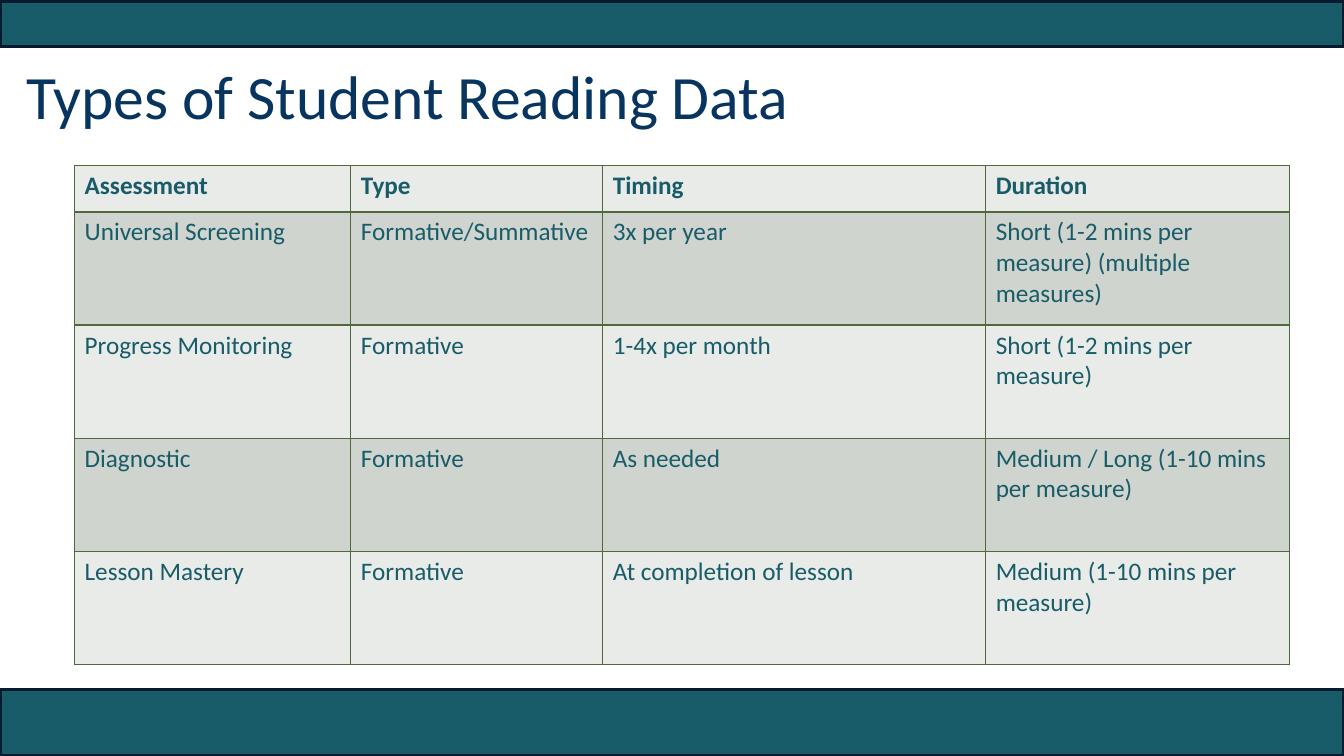
from dataclasses import dataclass

from lxml import etree
from pptx import Presentation
from pptx.dml.color import RGBColor
from pptx.enum import shapes, text
from pptx.oxml import ns
from pptx.util import Cm, Pt

TITLE = "Types of Student Reading Data"
ASSESSMENTS = [
    ("Assessment", "Type", "Timing", "Duration"),
    ("Universal Screening", "Formative/Summative", "3x per year",
     "Short (1-2 mins per measure) (multiple measures)"),
    ("Progress Monitoring", "Formative", "1-4x per month",
     "Short (1-2 mins per measure)"),
    ("Diagnostic", "Formative", "As needed",
     "Medium / Long (1-10 mins per measure)"),
    ("Lesson Mastery", "Formative", "At completion of lesson",
     "Medium (1-10 mins per measure)"),
]
SLIDE_WIDTH, SLIDE_HEIGHT = 33.87, 19.05
BANDS = [(0.03, 1.14), (17.37, 1.68)]  # top, height
COLUMN_WIDTHS = [6.96, 6.35, 9.65, 7.65]
HEADER_HEIGHT, ROW_HEIGHT = 1.17, 2.85


@dataclass(frozen=True)
class Theme:
    font: str = "Calibri"
    title_size: int = 44
    table_size: int = 18
    title: str = "08355F"
    teal: str = "185C69"
    band_line: str = "041B30"
    grid: str = "4F693D"
    row_fills: tuple = ("E9EBE8", "D0D4CE")


THEME = Theme()


def rgb(value):
    return RGBColor.from_string(value)


def write(frame, words, size, color, bold=False):
    run = frame.paragraphs[0].add_run()
    run.text = words
    run.font.name = THEME.font
    run.font.size = Pt(size)
    run.font.bold = bold
    run.font.color.rgb = rgb(color)


def add_band(slide, top, height):
    band = slide.shapes.add_shape(shapes.MSO_SHAPE.RECTANGLE, 0, Cm(top),
                                  Cm(SLIDE_WIDTH), Cm(height))
    band.shadow.inherit = False
    band.fill.solid()
    band.fill.fore_color.rgb = rgb(THEME.teal)
    band.line.color.rgb = rgb(THEME.band_line)
    band.line.width = Pt(2.5)


def add_title(slide):
    title = slide.shapes.add_textbox(Cm(0.41), Cm(1.55), Cm(29.21), Cm(2.2))
    frame = title.text_frame
    frame.word_wrap = True
    frame.vertical_anchor = text.MSO_ANCHOR.TOP
    frame.paragraphs[0].line_spacing = 0.9
    write(frame, TITLE, THEME.title_size, THEME.title)


def outline(cell):
    """Draw all four borders; they must come before the cell's fill in the XML."""
    properties = cell._tc.get_or_add_tcPr()
    for position, side in enumerate(("lnL", "lnR", "lnT", "lnB")):
        border = etree.Element(ns.qn(f"a:{side}"), w=str(Pt(1)))
        fill = etree.SubElement(border, ns.qn("a:solidFill"))
        etree.SubElement(fill, ns.qn("a:srgbClr"), val=THEME.grid)
        properties.insert(position, border)


def add_assessment_table(slide):
    heights = [HEADER_HEIGHT] + [ROW_HEIGHT] * (len(ASSESSMENTS) - 1)
    table = slide.shapes.add_table(
        len(heights), len(COLUMN_WIDTHS), Cm(1.88), Cm(4.17),
        Cm(sum(COLUMN_WIDTHS)), Cm(sum(heights))).table
    for column, width in zip(table.columns, COLUMN_WIDTHS):
        column.width = Cm(width)
    for r, (assessment, height) in enumerate(zip(ASSESSMENTS, heights)):
        table.rows[r].height = Cm(height)
        for c, words in enumerate(assessment):
            cell = table.cell(r, c)
            cell.fill.solid()
            cell.fill.fore_color.rgb = rgb(THEME.row_fills[r % 2])
            outline(cell)
            write(cell.text_frame, words, THEME.table_size, THEME.teal, bold=r == 0)


def main():
    deck = Presentation()
    deck.slide_width, deck.slide_height = Cm(SLIDE_WIDTH), Cm(SLIDE_HEIGHT)
    slide = deck.slides.add_slide(deck.slide_layouts[6])
    for top, height in BANDS:
        add_band(slide, top, height)
    add_title(slide)
    add_assessment_table(slide)
    deck.save("out.pptx")


if __name__ == "__main__":
    main()
